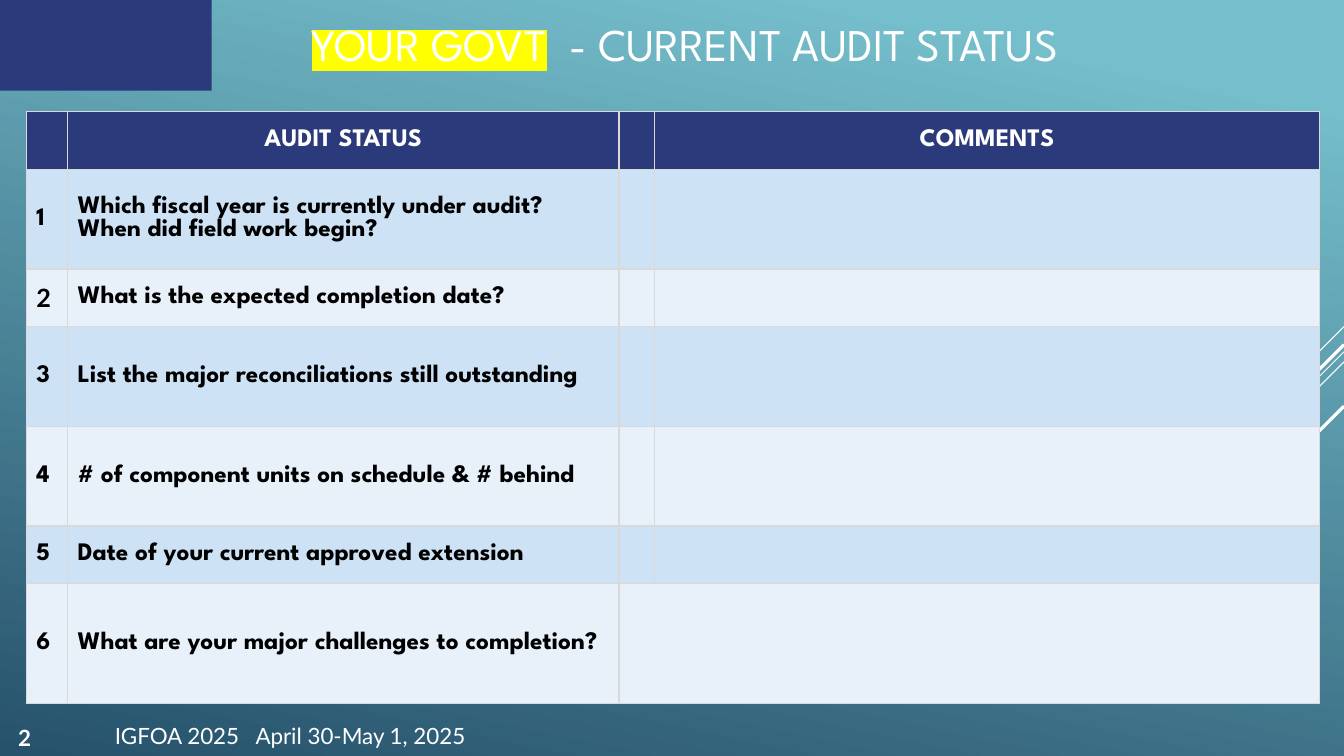
from lxml import etree
from pptx import Presentation
from pptx.dml.color import RGBColor
from pptx.enum.shapes import MSO_CONNECTOR, MSO_SHAPE
from pptx.enum.text import MSO_ANCHOR, PP_ALIGN
from pptx.oxml import parse_xml
from pptx.oxml.ns import nsdecls, qn
from pptx.util import Inches, Pt

STRAIGHT = MSO_CONNECTOR.STRAIGHT
RECTANGLE = MSO_SHAPE.RECTANGLE
MIDDLE, BOTTOM = MSO_ANCHOR.MIDDLE, MSO_ANCHOR.BOTTOM
LEFT, CENTER = PP_ALIGN.LEFT, PP_ALIGN.CENTER
NAVY, WHITE, BLACK, GRID = "2B3A7B", "FFFFFF", "000000", "D9D9D9"
BANDS = ["CDE3F5", "E8F1FA"]
HEADING_FONT, BODY_FONT = "League Spartan", "Lato"


def color(value):
    return RGBColor.from_string(value)


def format_text(frame, font, size, text_color, bold=False, align=LEFT, anchor=MIDDLE):
    frame.word_wrap = True
    frame.vertical_anchor = anchor
    paragraph = frame.paragraphs[0]
    paragraph.alignment = align
    paragraph.font.name = font
    paragraph.font.size = Pt(size)
    paragraph.font.bold = bold
    paragraph.font.color.rgb = color(text_color)


presentation = Presentation()
presentation.slide_width = Inches(13.33)
presentation.slide_height = Inches(7.5)
slide = presentation.slides.add_slide(presentation.slide_layouts[5])
shapes = slide.shapes

# Background gradient
background = slide.background.fill
background.gradient()
background.gradient_angle = 258
for stop, (position, value) in zip(background.gradient_stops,
                                   [(0.1, "75BECB"), (1, "27526C")]):
    stop.position = position
    stop.color.rgb = color(value)

# Diagonal lines from the right edge: start height, run, width
for top, run, width in [(3.24, 1, 0.75), (3.49, 3.26, 0.75), (3.59, 2.07, 0.75),
                        (3.42, 1.91, 2.25), (4.03, 1.39, 2.25)]:
    diagonal = shapes.add_connector(STRAIGHT, Inches(13.33), Inches(top),
                                    Inches(13.33 - run), Inches(top + run))
    diagonal.line.color.rgb = color(WHITE)
    diagonal.line.width = Pt(width)
    etree.SubElement(diagonal.element.spPr, qn("a:effectLst"))

# Corner block
corner = shapes.add_shape(RECTANGLE, 0, 0, Inches(2.1), Inches(0.9))
corner.shadow.inherit = False
corner.fill.solid()
corner.fill.fore_color.rgb = color(NAVY)
corner.line.fill.background()

# Footer
footer = shapes.add_textbox(Inches(1.04), Inches(7.1), Inches(4.5), Inches(0.4))
footer.text_frame.text = "IGFOA 2025   April 30-May 1, 2025"
format_text(footer.text_frame, BODY_FONT, 16, WHITE)

# Title with highlighted name
title = shapes.title
title.left, title.top = Inches(2.99), Inches(0)
title.width, title.height = Inches(8.97), Inches(0.86)
title_paragraph = title.text_frame.paragraphs[0]
for text in ["YOUR GOVT", "  - CURRENT AUDIT STATUS"]:
    title_paragraph.add_run().text = text
format_text(title.text_frame, HEADING_FONT, 32.4, WHITE)
highlight = parse_xml(f'<a:highlight {nsdecls("a")}><a:srgbClr val="FFFF00"/></a:highlight>')
title_paragraph.runs[0].font._element.append(highlight)

# Audit status table
questions = [
    "Which fiscal year is currently under audit?  When did field work begin?",
    "What is the expected completion date?",
    "List the major reconciliations still outstanding",
    "# of component units on schedule & # behind",
    "Date of your current approved extension",
    "What are your major challenges to completion?",
]
rows = [["", "AUDIT STATUS", "", "COMMENTS"]]
rows += [[str(number), question, "", ""] for number, question in enumerate(questions, 1)]
column_widths = [0.41, 5.47, 0.35, 6.6]
row_heights = [0.57, 0.99, 0.57, 0.99, 0.99, 0.57, 1.19]

table = shapes.add_table(len(rows), len(column_widths), Inches(0.26), Inches(1.11),
                         Inches(12.82), Inches(5.88)).table
for column, width in zip(table.columns, column_widths):
    column.width = Inches(width)
for row, height in zip(table.rows, row_heights):
    row.height = Inches(height)

for row_index, texts in enumerate(rows):
    header = row_index == 0
    for column_index, text in enumerate(texts):
        cell = table.cell(row_index, column_index)
        properties = cell._tc.get_or_add_tcPr()
        for side in ["lnL", "lnR", "lnT", "lnB"]:
            properties.append(parse_xml(
                f'<a:{side} {nsdecls("a")} w="12700"><a:solidFill>'
                f'<a:srgbClr val="{GRID}"/></a:solidFill></a:{side}>'))
        cell.fill.solid()
        cell.fill.fore_color.rgb = color(NAVY if header else BANDS[(row_index - 1) % 2])
        cell.vertical_anchor = MIDDLE
        if text:
            cell.text = text
            paragraph = cell.text_frame.paragraphs[0]
            paragraph.alignment = CENTER if header else LEFT
            paragraph.font.name = BODY_FONT if text == "2" else HEADING_FONT
            paragraph.font.size = Pt(18)
            paragraph.font.bold = True
            paragraph.font.color.rgb = color(WHITE if header else BLACK)
table.cell(6, 2).merge(table.cell(6, 3))

# Page number
page_number = shapes.add_textbox(0, Inches(6.99), Inches(0.49), Inches(0.51))
page_number.text_frame.text = "2"
format_text(page_number.text_frame, BODY_FONT, 16, WHITE, True, CENTER, BOTTOM)

presentation.save("out.pptx")
